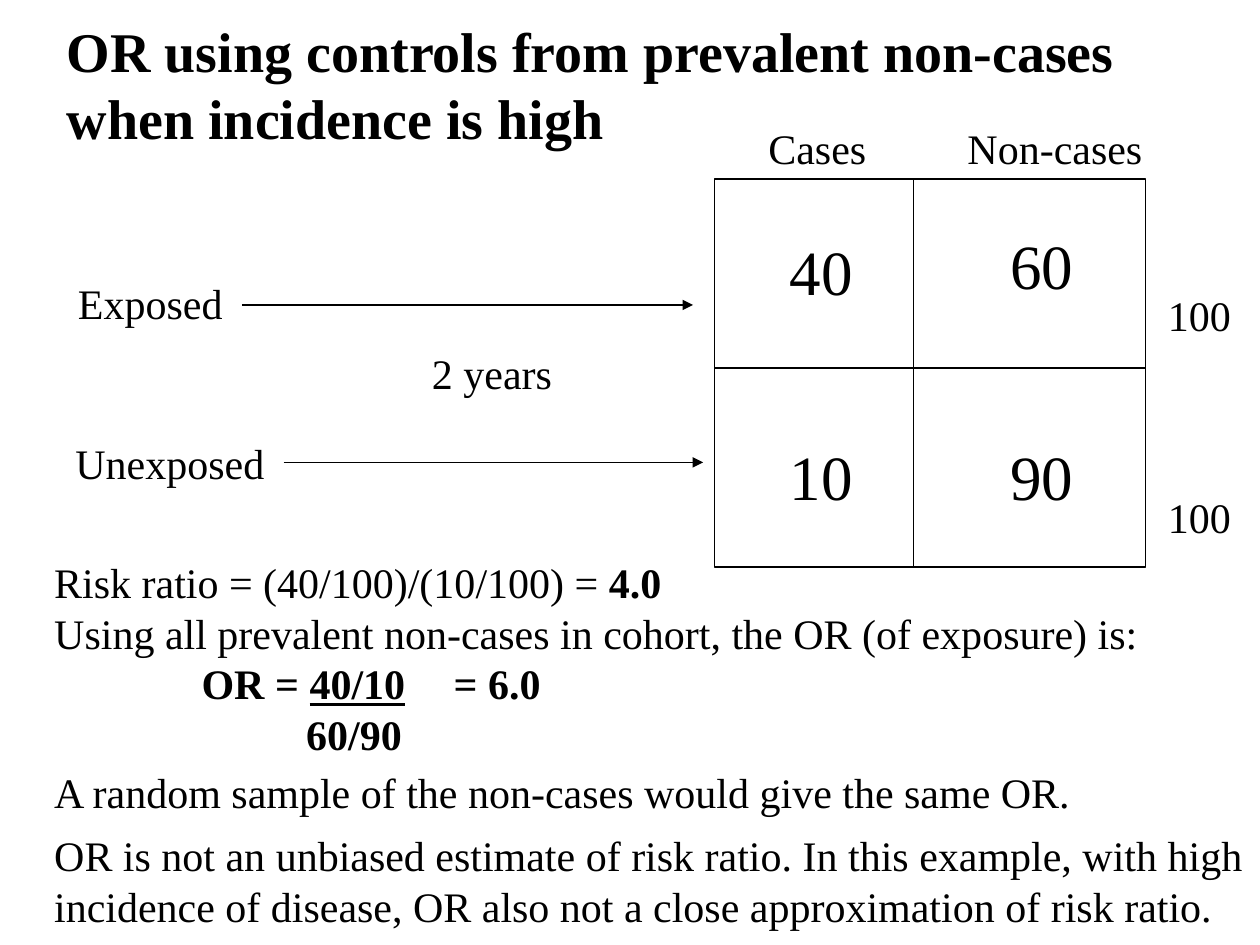
from lxml.etree import SubElement
from pptx import Presentation
from pptx.dml.color import RGBColor
from pptx.enum.shapes import MSO_CONNECTOR, MSO_SHAPE
from pptx.enum.text import MSO_ANCHOR, MSO_AUTO_SIZE, PP_ALIGN
from pptx.oxml.ns import qn
from pptx.util import Inches, Pt

COLORS = {"ink": "000000", "page": "FFFFFF"}
FONT = "Times New Roman"


def color(name):
    """Return a named colour."""
    return RGBColor.from_string(COLORS[name])


def style(para, size, bold=False):
    """Set the font of a whole paragraph."""
    font = para.font
    font.name, font.size, font.bold = FONT, Pt(size), bold
    font.color.rgb = color("ink")
    para.alignment = PP_ALIGN.LEFT


def place(shape, box):
    """Move a shape to a box given in inches."""
    shape.left, shape.top, shape.width, shape.height = map(Inches, box)


def label(slide, text, box, size=24):
    """Add one line of text."""
    frame = slide.shapes.add_textbox(*map(Inches, box)).text_frame
    frame.word_wrap = False
    frame.text = text
    style(frame.paragraphs[0], size)


def line(slide, start, end, arrow=False):
    """Draw a thin line, with an arrowhead if asked."""
    link = slide.shapes.add_connector(
        MSO_CONNECTOR.STRAIGHT, *map(Inches, (*start, *end)))
    link.line.color.rgb = color("ink")
    link.line.width = Pt(0.75)
    props = link._element.spPr
    if arrow:
        SubElement(props.find(qn("a:ln")), qn("a:tailEnd"), type="triangle")
    SubElement(props, qn("a:effectLst"))


def title(slide, box):
    """Fill the title."""
    shape = slide.shapes.title
    place(shape, box)
    frame = shape.text_frame
    frame.text = "OR using controls from prevalent non-cases\nwhen incidence is high"
    frame.word_wrap = False
    frame.auto_size = MSO_AUTO_SIZE.NONE
    frame.vertical_anchor = MSO_ANCHOR.TOP
    for para in frame.paragraphs:
        style(para, 32, True)


def grid(slide, box):
    """Draw the two-by-two table of counts with its heads and totals."""
    left, top, width, height = box
    right, base = left + width, top + height
    midx, midy = left + 1.58, top + 1.5
    frame = slide.shapes.add_shape(MSO_SHAPE.RECTANGLE, *map(Inches, box))
    frame.shadow.inherit = False
    frame.fill.background()
    frame.line.color.rgb = color("ink")
    frame.line.width = Pt(0.75)
    line(slide, (midx, top), (midx, base))
    line(slide, (left, midy), (right, midy))
    label(slide, "Cases", (left + 0.33, top - 0.5, 0.98, 0.5))
    label(slide, "Non-cases", (midx + 0.33, top - 0.5, 1.59, 0.5))
    counts = (("40", 0.5, 0.38), ("60", 2.25, 0.33),
              ("10", 0.5, 2), ("90", 2.25, 2))
    for text, x, y in counts:
        label(slide, text, (left + x, top + y, 0.7, 0.7), 36)
    for y in (0.83, 2.43):
        label(slide, "100", (right + 0.08, top + y, 0.7, 0.5))


def cohort(slide, box):
    """Draw the two groups and their follow-up arrows."""
    left, top, width, height = box
    right, base = left + width, top + height
    label(slide, "Exposed", (left + 0.02, top - 0.27, 1.35, 0.5))
    line(slide, (left + 1.42, top), (right - 0.08, top), True)
    label(slide, "2 years", (left + 2.83, top + 0.29, 1.16, 0.5))
    label(slide, "Unexposed", (left, base - 0.25, 1.7, 0.5))
    line(slide, (left + 1.75, base), (right, base), True)


def notes(slide, box):
    """Fill the body with the worked ratios and the conclusions."""
    rows = (
        (0, 0, (("Risk ratio = (40/100)/(10/100) = ", False, False),
                ("4.0", True, False))),
        (0, 0, (("Using all prevalent non-cases in cohort, "
                 "the OR (of exposure) is:", False, False),)),
        (1.17, 0, (("OR = ", True, False), ("40/10", True, True),
                   ("\t= 6.0", True, False))),
        (2, 0, (("60/90", True, False),)),
        (0, 4.8, (("A random sample of the non-cases would give the same OR.",
                   False, False),)),
        (0, 7.2, (("OR is not an unbiased estimate of risk ratio. In this "
                   "example, with high incidence of disease, OR also not a "
                   "close approximation of risk ratio.", False, False),)),
    )
    body = slide.placeholders[1]
    place(body, box)
    frame = body.text_frame
    frame.word_wrap = True
    frame.auto_size = MSO_AUTO_SIZE.NONE
    frame.vertical_anchor = MSO_ANCHOR.TOP
    for num, (indent, gap, runs) in enumerate(rows):
        para = frame.add_paragraph() if num else frame.paragraphs[0]
        props = para._p.get_or_add_pPr()
        props.set("marL", str(Inches(indent)))
        props.set("indent", "0")
        SubElement(props, qn("a:buNone"))
        tabs = SubElement(props, qn("a:tabLst"))
        SubElement(tabs, qn("a:tab"), pos=str(Inches(3.04)), algn="l")
        style(para, 24)
        para.space_before = Pt(gap)
        for text, bold, under in runs:
            run = para.add_run()
            run.text = text
            run.font.bold, run.font.underline = bold, under


def main():
    """Build the slide and save it."""
    deck = Presentation()
    deck.slide_width, deck.slide_height = Inches(10), Inches(7.5)
    slide = deck.slides.add_slide(deck.slide_layouts[1])
    slide.background.fill.solid()
    slide.background.fill.fore_color.rgb = color("page")
    title(slide, (0.43, 0.08, 8.7, 1.18))
    cohort(slide, (0.5, 2.42, 5.08, 1.25))
    grid(slide, (5.67, 1.42, 3.42, 3.08))
    notes(slide, (0.33, 4.37, 9.67, 3.13))
    deck.save("out.pptx")


if __name__ == "__main__":
    main()
